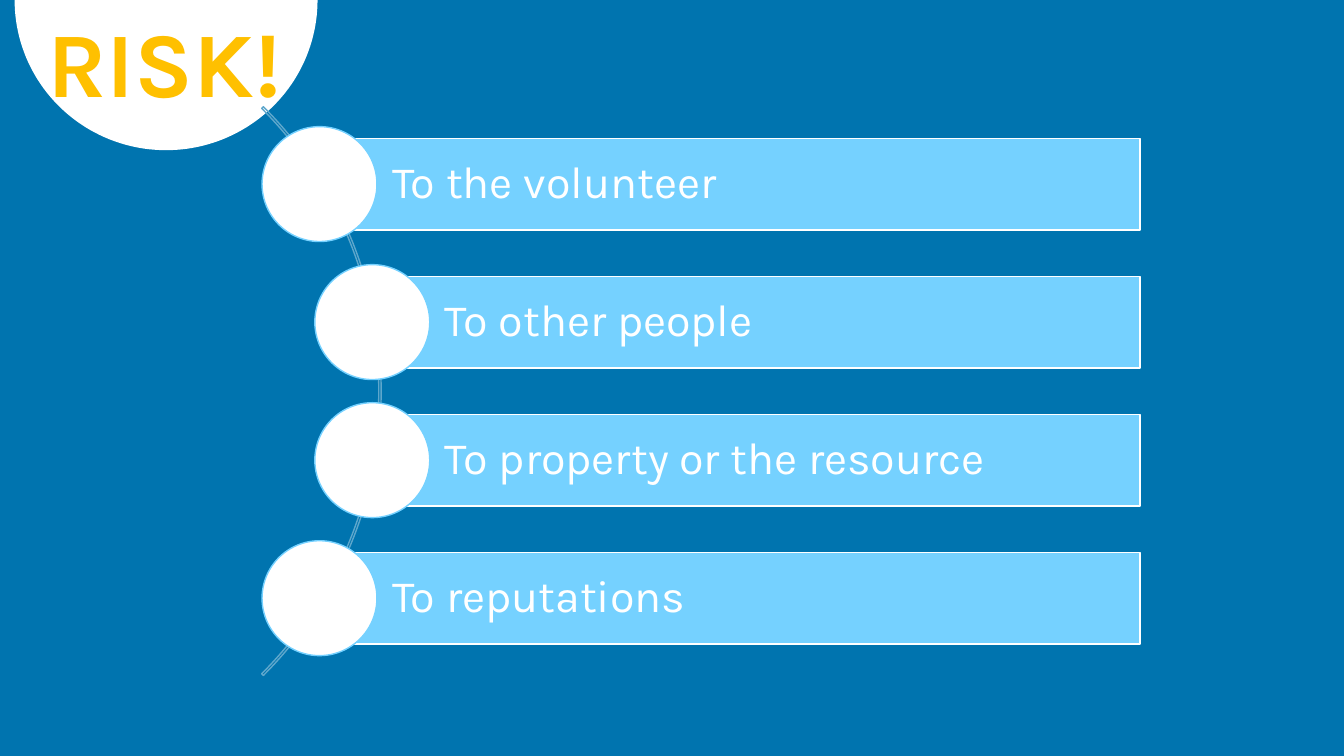
import math
import pptx
import pptx.util
import pptx.dml.color
import pptx.enum.shapes
import pptx.enum.text

RGB = pptx.dml.color.RGBColor
BLUE = RGB(0x00, 0x74, 0xAF)
SKY = RGB(0x75, 0xD1, 0xFF)
MIST = RGB(0x5E, 0xA7, 0xCC)
WHITE = RGB(0xFF, 0xFF, 0xFF)
GOLD = RGB(0xFF, 0xC0, 0x00)

KIND = pptx.enum.shapes.MSO_SHAPE
ALIGN = pptx.enum.text.PP_ALIGN
ANCHOR = pptx.enum.text.MSO_ANCHOR
FIT = pptx.enum.text.MSO_AUTO_SIZE
INCH = pptx.util.Inches
PT = pptx.util.Pt

RISKS = ["To the volunteer", "To other people",
         "To property or the resource", "To reputations"]


def apply(item, form):
    for name, value in form.items():
        setattr(item, name, value)


class Board:
    """Holds the style and the slide; lengths are hundredths of its size."""
    font = "Karla"
    wide, high = INCH(13.33), INCH(7.5)

    def __init__(self):
        self.deck = pptx.Presentation()
        apply(self.deck, {"slide_width": self.wide, "slide_height": self.high})
        self.slide = self.deck.slides.add_slide(self.deck.slide_layouts[5])
        back = self.slide.background.fill
        back.solid()
        back.fore_color.rgb = BLUE

    def x(self, cols):
        return round(self.wide * cols / 100)

    def y(self, rows):
        return round(self.high * rows / 100)

    def box(self, left, top, width, height):
        return self.x(left), self.y(top), self.x(width), self.y(height)

    def paint(self, shape, fill=None, line=None):
        shape.shadow.inherit = False
        if fill is None:
            shape.fill.background()
        else:
            shape.fill.solid()
            shape.fill.fore_color.rgb = fill
        if line is None:
            shape.line.fill.background()
        else:
            shape.line.color.rgb = line
            shape.line.width = PT(1)
        return shape

    def shape(self, kind, box, fill=None, line=None):
        item = self.slide.shapes.add_shape(kind, *self.box(*box))
        return self.paint(item, fill, line)

    def text(self, shape, words, color, frame, para, font):
        body = shape.text_frame
        body.text = words
        apply(body, frame)
        first = body.paragraphs[0]
        apply(first, para)
        apply(first.font, {"name": self.font, **font})
        first.font.color.rgb = color

    def half(self, mid, wide, deep, fill, steps=90):
        """Lower half of a disc hanging from the top edge."""
        turns = [math.pi * i / steps for i in range(steps + 1)]
        dots = [(self.x(mid + wide * math.cos(t)), self.y(deep * math.sin(t)))
                for t in turns]
        path = self.slide.shapes.build_freeform(*dots[0])
        path.add_line_segments(dots[1:], close=True)
        self.paint(path.convert_to_shape(), fill)

    def arc(self, box, marks, line):
        ring = self.shape(KIND.BLOCK_ARC, box, line=line)
        for i, mark in enumerate(marks):
            ring.adjustments[i] = mark

    def risk(self, words, left, mid, right=84.83, tall=12.13):
        bar = self.shape(KIND.RECTANGLE,
                         (left, mid - tall / 2, right - left, tall), SKY, WHITE)
        self.text(bar, words, WHITE,
                  {"word_wrap": True, "vertical_anchor": ANCHOR.MIDDLE,
                   "margin_left": INCH(0.72), "margin_right": INCH(0.09),
                   "margin_top": INCH(0.09), "margin_bottom": INCH(0.09)},
                  {"alignment": ALIGN.LEFT, "line_spacing": 0.9},
                  {"size": PT(32)})
        wide, high = 8.55, 15.2
        self.shape(KIND.OVAL, (left - wide / 2, mid - high / 2, wide, high),
                   WHITE, SKY)

    def title(self, words, box):
        head = self.slide.shapes.title
        sides = ("left", "top", "width", "height")
        apply(head, dict(zip(sides, self.box(*box))))
        self.text(head, words, GOLD,
                  {"word_wrap": True, "vertical_anchor": ANCHOR.TOP,
                   "auto_size": FIT.SHAPE_TO_FIT_TEXT},
                  {"alignment": ALIGN.CENTER},
                  {"size": PT(66), "bold": True})
        # Bring the title in front of the half disc
        head.element.getparent().append(head.element)


def main():
    board = Board()
    # Corner disc and the arc that links the risks
    board.half(12.36, 11.27, 19.87, WHITE)
    board.arc((-31.5, -1.47, 59.86, 106.4), (189, 27, 0.003), MIST)
    # Risk bars, the middle two set further in along the arc
    for i, words in enumerate(RISKS):
        left = 27.7 if i in (1, 2) else 23.77
        board.risk(words, left, 24.35 + 18.26 * i)
    # Heading
    board.title("RISK!", (2.7, 0, 19.05, 16.13))
    board.deck.save("out.pptx")


if __name__ == "__main__":
    main()
